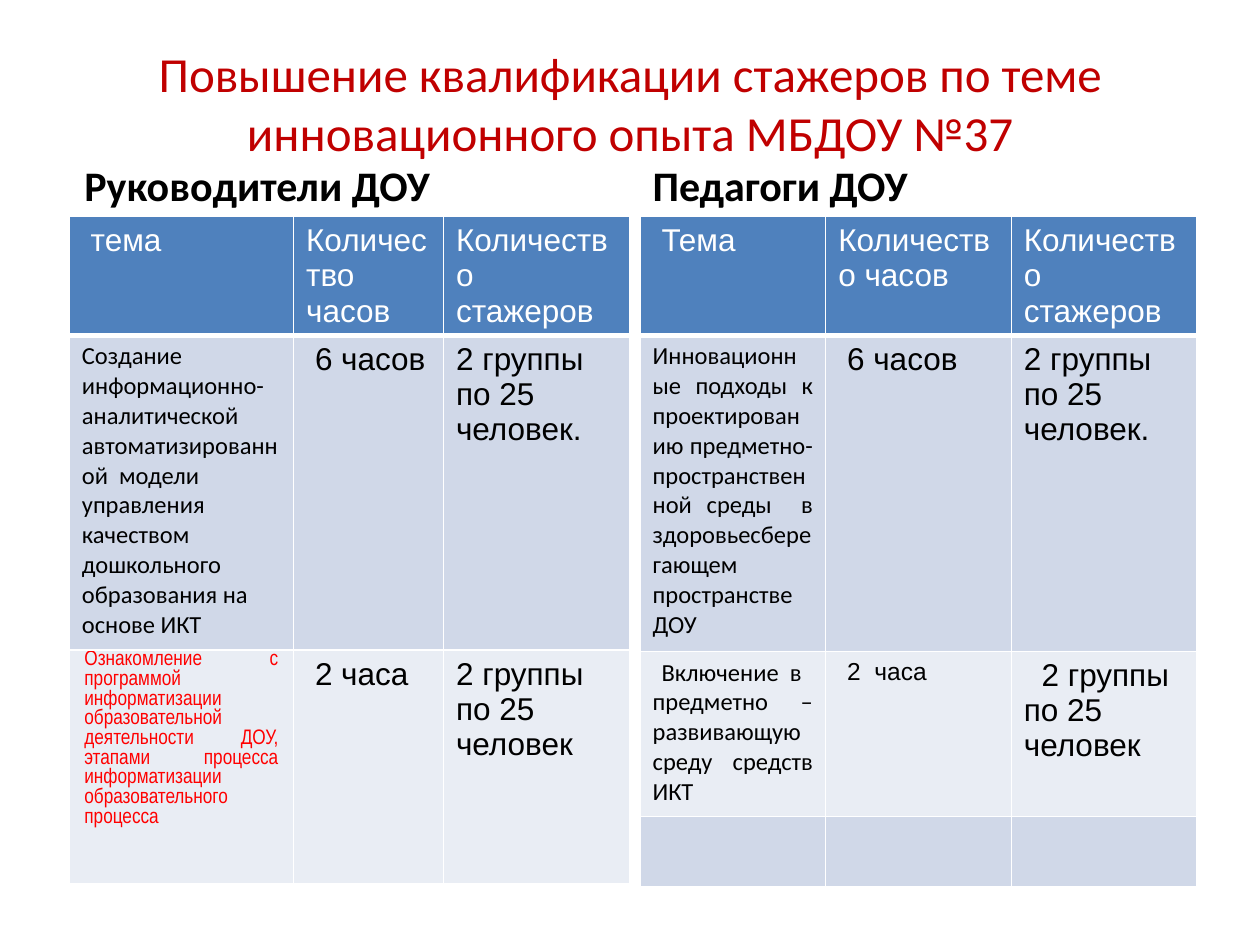
from lxml.etree import SubElement
from pptx import Presentation
from pptx.dml.color import RGBColor
from pptx.enum.text import MSO_ANCHOR, MSO_AUTO_SIZE, PP_ALIGN
from pptx.oxml.ns import qn
from pptx.util import Inches, Pt

BLACK, WHITE, BLUE = "000000", "FFFFFF", "4F81BD"
BANDS = ["E9EDF4", "D0D8E8"]

TITLE = dict(name="Calibri", size=28, color="C00000", bold=False,
             alignment=PP_ALIGN.CENTER)
LABEL = dict(name="Calibri", size=24, color=BLACK, bold=True)
HEAD = dict(name="Arial", size=18, color=WHITE, bold=False)
BODY = dict(HEAD, color=BLACK)
SMALL = dict(BODY, size=14)
TOPIC = dict(SMALL, name="Calibri")
EVEN = dict(TOPIC, alignment=PP_ALIGN.JUSTIFY)
RED = dict(EVEN, name="Arial Narrow", size=12, color="FF0000")
STEP = 0.07  # first-line shift of one level


def paint(color):
    return RGBColor.from_string(color)


def write(frame, text, style, shift=0):
    """Put one formatted paragraph in a text frame."""
    para = frame.paragraphs[0]
    para.text = text
    if shift:
        para._p.get_or_add_pPr().set("indent", str(Inches(shift)))
    for key, value in style.items():
        if key == "color":
            para.font.color.rgb = paint(value)
        elif key == "size":
            para.font.size = Pt(value)
        elif key == "alignment":
            para.alignment = value
        else:
            setattr(para.font, key, value)


def place(shape, box):
    for key, value in zip(("left", "top", "width", "height"), box):
        setattr(shape, key, Inches(value))


def add_text(shape, box, text, style, anchor, shift=0):
    place(shape, box)
    frame = shape.text_frame
    frame.word_wrap = True
    frame.auto_size = MSO_AUTO_SIZE.NONE
    frame.vertical_anchor = anchor
    write(frame, text, style, shift)


def edge(cell, base):
    """Draw white borders, the lower one as thick as base."""
    props = cell._tc.get_or_add_tcPr()
    for side, width in zip("LRTB", (1, 1, 1, base)):
        line = SubElement(props, qn(f"a:ln{side}"), w=str(Pt(width)))
        fill = SubElement(line, qn("a:solidFill"))
        SubElement(fill, qn("a:srgbClr"), val=WHITE)


def add_grid(slide, box, cols, rows, data):
    """Each entry of data is (text, style, first-line shift)."""
    grid = slide.shapes.add_table(len(rows), len(cols),
                                  *map(Inches, box)).table
    for col, width in zip(grid.columns, cols):
        col.width = Inches(width)
    for row, height in zip(grid.rows, rows):
        row.height = Inches(height)
    for r in range(len(rows)):
        for c in range(len(cols)):
            cell = grid.cell(r, c)
            edge(cell, 1 if r else 3)
            cell.fill.solid()
            cell.fill.fore_color.rgb = paint(BANDS[r % 2] if r else BLUE)
            if r >= len(data):
                continue
            text, style, shift = data[r][c]
            if style is RED:
                cell.margin_left = cell.margin_right = Inches(0.12)
                cell.margin_top = cell.margin_bottom = 0
            write(cell.text_frame, text, style, shift)


def head(topic):
    return [(topic, HEAD, STEP), ("Количество часов", HEAD, 0),
            ("Количество стажеров", HEAD, 0)]


def first(topic, style):
    return [(topic, style, 0), ("6 часов", BODY, STEP),
            ("2 группы по 25 человек.", BODY, 0)]


LEADERS = [
    head("тема"),
    first("Создание информационно-аналитической автоматизированной  модели "
          "управления качеством дошкольного образования на основе ИКТ", TOPIC),
    [("Ознакомление с программой информатизации образовательной "
      "деятельности ДОУ, этапами процесса информатизации "
      "образовательного процесса", RED, 0),
     ("2 часа", BODY, STEP), ("2 группы по 25 человек", BODY, 0)],
]
TEACHERS = [
    head("Тема"),
    first("Инновационные подходы к проектированию предметно-пространственной "
          "среды  в здоровьесберегающем пространстве ДОУ", EVEN),
    [("Включение в  предметно – развивающую среду средств ИКТ", EVEN, STEP),
     ("2  часа", SMALL, STEP),
     ("2 группы по 25 человек", BODY, 2 * STEP)],
]


def main():
    deck = Presentation()
    deck.slide_width, deck.slide_height = Inches(10), Inches(7.5)
    slide = deck.slides.add_slide(deck.slide_layouts[4])
    parts = {p.placeholder_format.idx: p for p in slide.placeholders}
    for idx in (2, 4):
        item = parts[idx].element
        item.getparent().remove(item)

    add_text(parts[0], (0.5, 0.3, 9, 1.03),
             "Повышение квалификации стажеров по теме инновационного опыта "
             "МБДОУ №37", TITLE, MSO_ANCHOR.MIDDLE)
    add_text(parts[1], (0.5, 1.33, 4.42, 0.39), "Руководители ДОУ",
             LABEL, MSO_ANCHOR.BOTTOM, STEP)
    add_grid(slide, (0.55, 1.72, 4.45, 5.07), (1.78, 1.19, 1.48),
             (0.72, 2.5, 1.85), LEADERS)
    add_text(parts[3], (5.08, 1.25, 4.42, 0.47), "Педагоги ДОУ",
             LABEL, MSO_ANCHOR.BOTTOM)
    add_grid(slide, (5.08, 1.72, 4.42, 5.1), [4.42 / 3] * 3,
             (0.72, 2.51, 1.31, 0.56), TEACHERS)
    deck.save("out.pptx")


if __name__ == "__main__":
    main()
